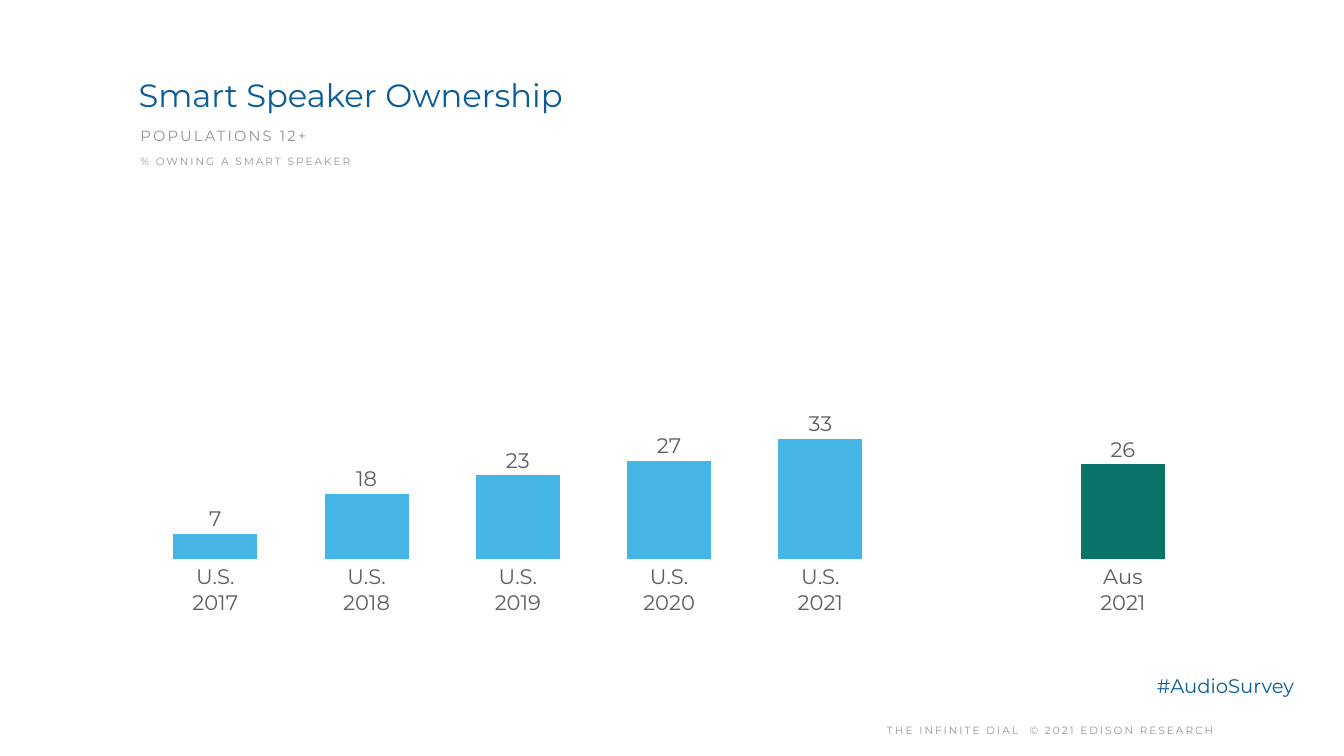
"""Build the smart speaker ownership slide."""
from lxml import etree
from pptx import Presentation
from pptx.chart.data import CategoryChartData
from pptx.dml.color import RGBColor
from pptx.enum.chart import XL_CHART_TYPE, XL_LABEL_POSITION, XL_TICK_LABEL_POSITION, XL_TICK_MARK
from pptx.enum.text import MSO_ANCHOR, PP_ALIGN
from pptx.oxml.ns import qn
from pptx.util import Pt

COLUMNS = XL_CHART_TYPE.COLUMN_CLUSTERED
OUTSIDE_END = XL_LABEL_POSITION.OUTSIDE_END
LOW = XL_TICK_LABEL_POSITION.LOW
NO_TICK = XL_TICK_MARK.NONE
TOP, MIDDLE = MSO_ANCHOR.TOP, MSO_ANCHOR.MIDDLE
LEFT, CENTER = PP_ALIGN.LEFT, PP_ALIGN.CENTER

NAVY = RGBColor(0x0A, 0x5D, 0x96)
GRAY = RGBColor(0x95, 0x95, 0x95)
DARK_GRAY = RGBColor(0x5E, 0x5E, 0x5E)
SKY = RGBColor(0x45, 0xB5, 0xE5)
GREEN = RGBColor(0x0B, 0x74, 0x68)

OWNERSHIP = [
    ("U.S.\n2017", 7),
    ("U.S.\n2018", 18),
    ("U.S.\n2019", 23),
    ("U.S.\n2020", 27),
    ("U.S.\n2021", 33),
    ("", None),
    ("Aus\n2021", 26),
]
AUSTRALIA = len(OWNERSHIP) - 1
PLOT_LAYOUT = {
    "layoutTarget": "inner", "xMode": "edge", "yMode": "edge",
    "x": 0.014, "y": 0.123, "w": 0.981, "h": 0.741,
}


def write_text(frame, text, size, color, font, align=LEFT, line_spacing=1.0, tracking=0):
    paragraph = frame.paragraphs[0]
    paragraph.alignment = align
    paragraph.line_spacing = line_spacing
    run = paragraph.add_run()
    run.text = text
    run.font.name = font
    run.font.size = Pt(size)
    run.font.color.rgb = color
    if tracking:
        run.font._element.set("spc", str(round(tracking * 100)))


class SlideBuilder:
    def __init__(self, slide, font, inset):
        self.slide = slide
        self.font = font
        self.inset = Pt(inset)

    def text(self, box, text, size, color, anchor=TOP, **style):
        frame = self.slide.shapes.add_textbox(*map(Pt, box)).text_frame
        frame.word_wrap = True
        frame.vertical_anchor = anchor
        frame.margin_left = frame.margin_right = self.inset
        frame.margin_top = frame.margin_bottom = self.inset
        write_text(frame, text, size, color, self.font, **style)

    def style_font(self, font, size, color):
        font.name = self.font
        font.size = Pt(size)
        font.color.rgb = color

    def column_chart(self, box, rows, color, highlights):
        data = CategoryChartData(number_format="General")
        data.categories = [category for category, _ in rows]
        data.add_series("Series 1", [value for _, value in rows])
        chart = self.slide.shapes.add_chart(COLUMNS, *map(Pt, box), data).chart
        chart.has_legend = chart.has_title = False
        self.style_font(chart.font, 10, GRAY)

        category_axis = chart.category_axis
        category_axis.tick_label_position = LOW
        category_axis.major_tick_mark = category_axis.minor_tick_mark = NO_TICK
        category_axis.format.line.fill.background()
        self.style_font(category_axis.tick_labels.font, 30, DARK_GRAY)

        value_axis = chart.value_axis
        value_axis.minimum_scale, value_axis.maximum_scale = 0, 100
        value_axis.major_unit = 20
        value_axis.has_major_gridlines = False
        value_axis.visible = False

        plot = chart.plots[0]
        plot.gap_width, plot.overlap = 80, -10
        plot.vary_by_categories = False
        series = plot.series[0]
        series.format.fill.solid()
        series.format.fill.fore_color.rgb = color
        for index, highlight in highlights.items():
            fill = series.points[index].format.fill
            fill.solid()
            fill.fore_color.rgb = highlight

        labels = series.data_labels
        labels.show_value = True
        labels.position = OUTSIDE_END
        labels.number_format, labels.number_format_is_linked = "#,##0", False
        self.style_font(labels.font, 30, DARK_GRAY)
        self.place_plot(chart)

    def place_plot(self, chart):
        plot_area = next(chart.element.iter(qn("c:plotArea")))
        for layout in plot_area.findall(qn("c:layout")):
            plot_area.remove(layout)
        layout = etree.Element(qn("c:layout"))
        manual = etree.SubElement(layout, qn("c:manualLayout"))
        for tag, value in PLOT_LAYOUT.items():
            etree.SubElement(manual, qn(f"c:{tag}"), val=str(value))
        plot_area.insert(0, layout)


def main():
    deck = Presentation()
    deck.slide_width, deck.slide_height = Pt(1920), Pt(1080)
    builder = SlideBuilder(deck.slides.add_slide(deck.slide_layouts[6]), "Montserrat", 6)

    builder.text((1076.5, 1023, 848, 38), "THE INFINITE DIAL  © 2021 EDISON RESEARCH", 15, GRAY,
                 anchor=MIDDLE, align=CENTER, line_spacing=1.2, tracking=2.9)
    builder.text((1646.5, 954, 237, 49), "#AudioSurvey", 28, NAVY, line_spacing=1.1)
    builder.column_chart((178, 190, 1542, 705), OWNERSHIP, SKY, {AUSTRALIA: GREEN})
    builder.text((192, 101.5, 1562, 88.5), "Smart Speaker Ownership", 46, NAVY)
    builder.text((194.5, 172, 1623.5, 39.5), "POPULATIONS 12+", 21, GRAY,
                 anchor=MIDDLE, line_spacing=1.2, tracking=3.1)
    builder.text((194.5, 212.5, 889, 33), "% OWNING A SMART SPEAKER", 15, GRAY,
                 anchor=MIDDLE, line_spacing=1.2, tracking=2.9)

    deck.save("out.pptx")


if __name__ == "__main__":
    main()
